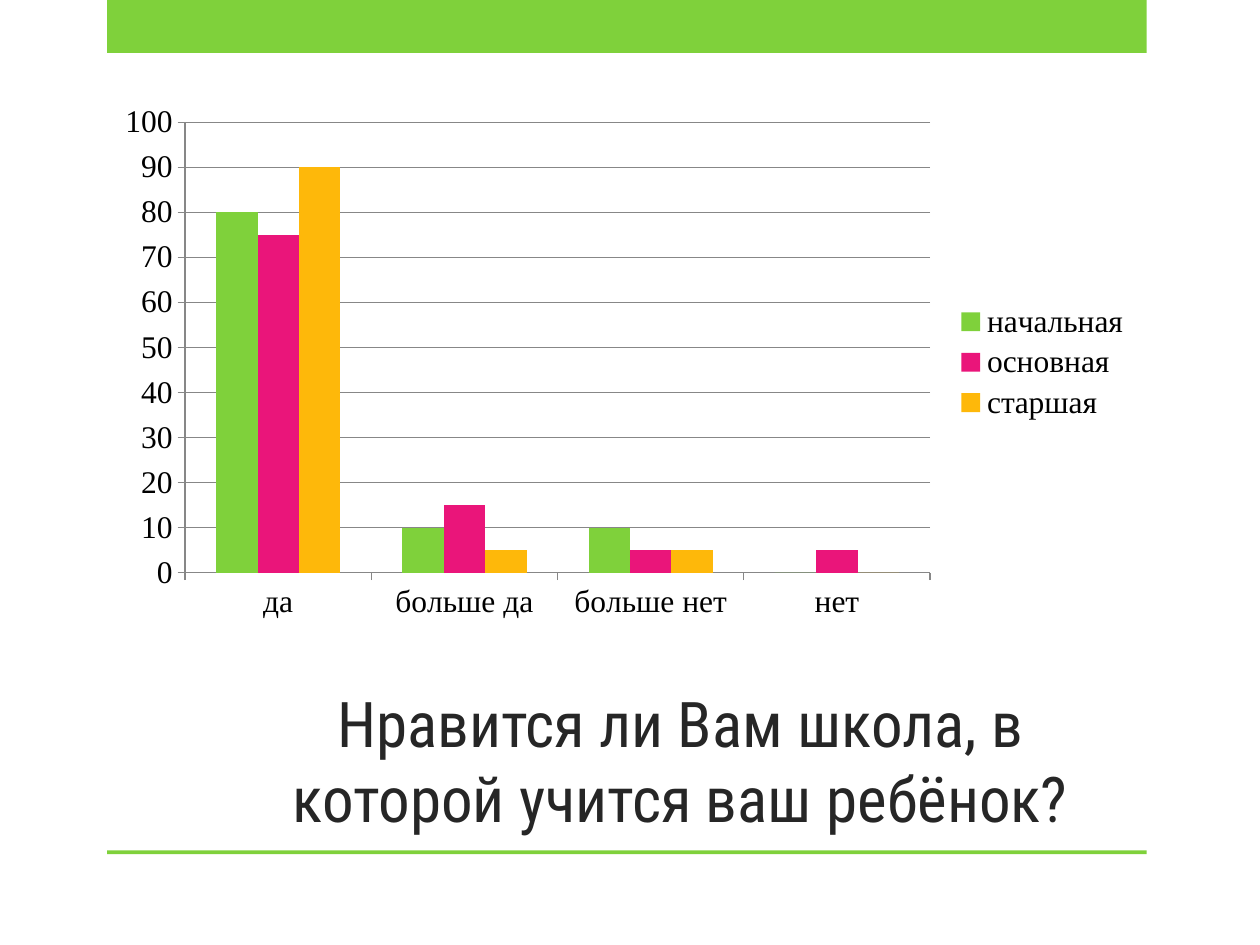
import pptx
import pptx.chart.data
import pptx.dml.color
import pptx.enum.chart
import pptx.enum.shapes
import pptx.enum.text
import pptx.util
from pptx.util import Inches

GREEN = pptx.dml.color.RGBColor(0x7F, 0xD1, 0x3B)
PINK = pptx.dml.color.RGBColor(0xEA, 0x15, 0x7A)
AMBER = pptx.dml.color.RGBColor(0xFE, 0xB8, 0x0A)
GRAY = pptx.dml.color.RGBColor(0x87, 0x87, 0x87)
BLACK = pptx.dml.color.RGBColor(0, 0, 0)
DARK = pptx.dml.color.RGBColor(0x26, 0x26, 0x26)

CATEGORIES = ["да", "больше да", "больше нет", "нет"]
SERIES = [
    ("начальная", (80, 10, 10, 0), GREEN),
    ("основная", (75, 15, 5, 5), PINK),
    ("старшая", (90, 5, 5, 0), AMBER),
]


def add_bands(slide, left, top, width, height):
    """Thick band at the top of the box, thin rule at its bottom."""
    thick, thin = Inches(0.42), Inches(0.03)
    for band_top, band_height in ((top, thick), (top + height - thin, thin)):
        band = slide.shapes.add_shape(
            pptx.enum.shapes.MSO_SHAPE.RECTANGLE, left, band_top, width, band_height)
        band.shadow.inherit = False
        band.fill.solid()
        band.fill.fore_color.rgb = GREEN
        band.line.fill.background()


def set_title(slide, left, top, width, height):
    title = slide.shapes.title
    title.left, title.top, title.width, title.height = left, top, width, height
    text_frame = title.text_frame
    text_frame.text = "Нравится ли Вам школа, в которой учится ваш ребёнок?"
    text_frame.word_wrap = True
    text_frame.auto_size = pptx.enum.text.MSO_AUTO_SIZE.NONE
    text_frame.vertical_anchor = pptx.enum.text.MSO_ANCHOR.BOTTOM
    paragraph = text_frame.paragraphs[0]
    paragraph.alignment = pptx.enum.text.PP_ALIGN.CENTER
    font = paragraph.runs[0].font
    font.name = "Roboto Condensed"
    font.size = pptx.util.Pt(36)
    font.color.rgb = DARK


def add_survey_chart(slide, left, top, width, height):
    chart_data = pptx.chart.data.CategoryChartData()
    chart_data.categories = CATEGORIES
    for name, values, _ in SERIES:
        chart_data.add_series(name, values)
    chart = slide.shapes.add_chart(
        pptx.enum.chart.XL_CHART_TYPE.COLUMN_CLUSTERED,
        left, top, width, height, chart_data).chart
    chart.has_title = False
    chart.font.name = "Times New Roman"
    chart.font.size = pptx.util.Pt(18)
    chart.font.color.rgb = BLACK

    # Legend
    chart.has_legend = True
    chart.legend.position = pptx.enum.chart.XL_LEGEND_POSITION.RIGHT
    chart.legend.include_in_layout = False

    # Columns
    plot = chart.plots[0]
    plot.gap_width = 150
    plot.overlap = 0
    plot.vary_by_categories = False
    for series, (_, _, color) in zip(plot.series, SERIES):
        series.format.fill.solid()
        series.format.fill.fore_color.rgb = color

    # Axes and gridlines
    value_axis = chart.value_axis
    value_axis.minimum_scale, value_axis.maximum_scale = 0, 100
    value_axis.major_unit = 10
    value_axis.has_major_gridlines = True
    for axis in (chart.category_axis, value_axis):
        axis.major_tick_mark = pptx.enum.chart.XL_TICK_MARK.OUTSIDE
    for part in (chart.category_axis, value_axis, value_axis.major_gridlines):
        part.format.line.color.rgb = GRAY
        part.format.line.width = pptx.util.Pt(0.75)


def main():
    presentation = pptx.Presentation()
    presentation.slide_width = Inches(10)
    presentation.slide_height = Inches(7.5)
    slide = presentation.slides.add_slide(presentation.slide_layouts[5])
    add_bands(slide, Inches(0.85), Inches(0), Inches(8.25), Inches(6.78))
    set_title(slide, Inches(1.69), Inches(4.93), Inches(7.42), Inches(1.75))
    add_survey_chart(slide, Inches(0.83), Inches(0.75), Inches(8.25), Inches(4.25))
    presentation.save("out.pptx")


if __name__ == "__main__":
    main()
